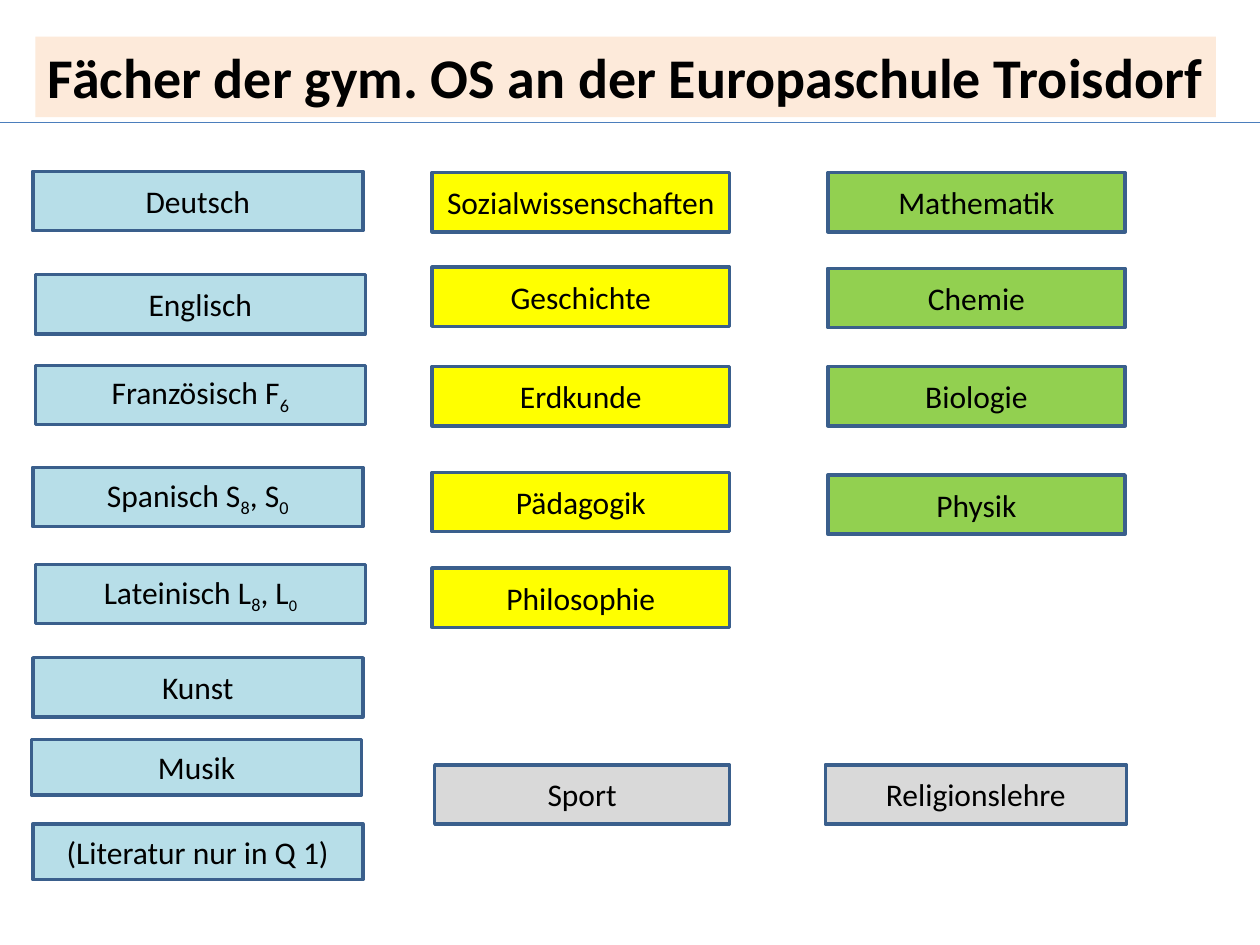
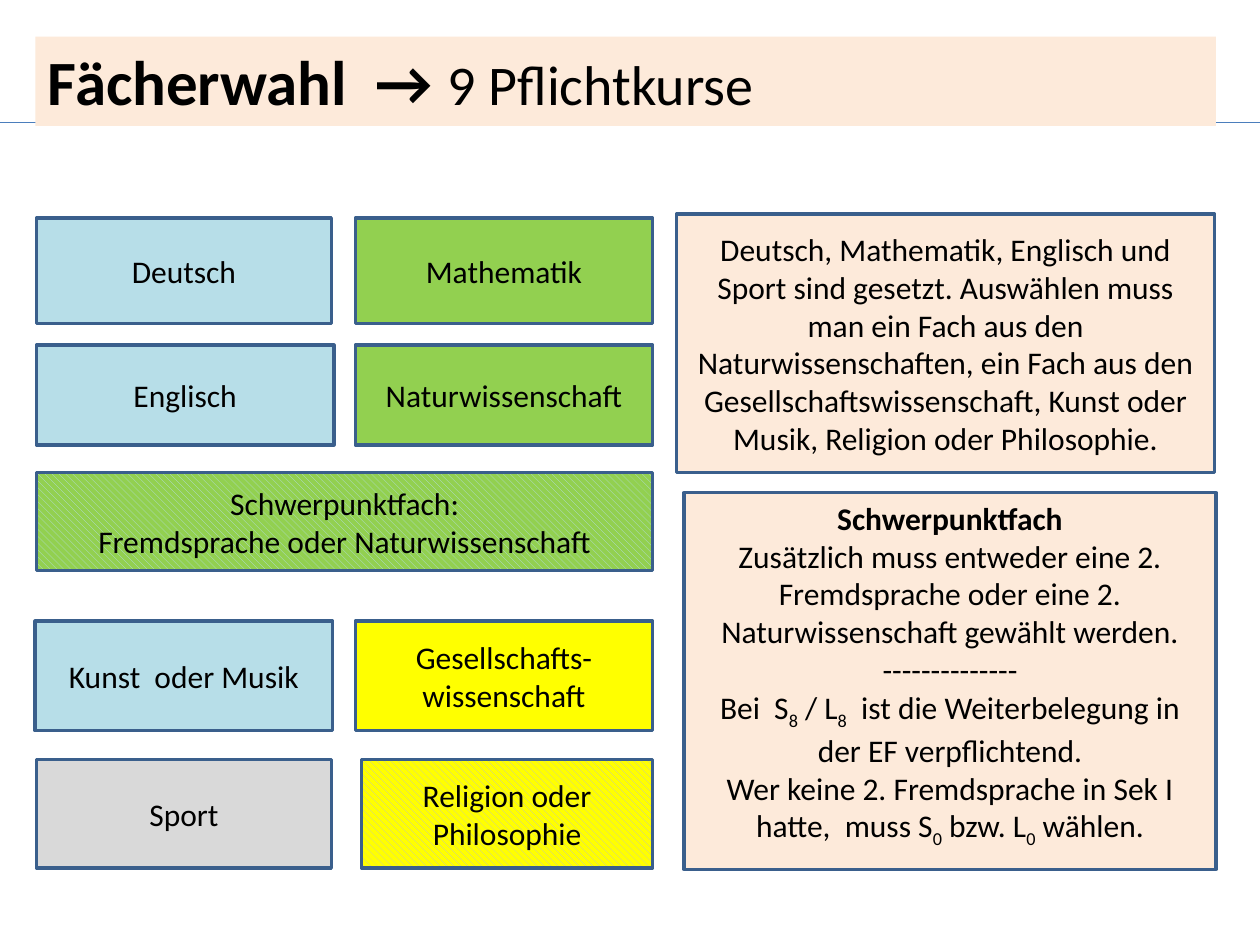
from dataclasses import dataclass

from lxml import etree
from pptx import Presentation
from pptx import util as u
from pptx.dml import color
from pptx.enum import dml, shapes, text
from pptx.oxml import ns

PX = 9144  # 100 px to the inch


@dataclass(frozen=True)
class Theme:
    font: str = "Calibri"
    ink: str = "000000"
    edge: str = "3A5F8C"
    rule: str = "4B7EBC"
    peach: str = "FDEADA"
    blue: str = "B7DEE8"
    green: str = "92D050"
    yellow: str = "FFFF00"
    gray: str = "D9D9D9"
    hatch: str = "BFBFBF"
    body: int = 18
    small: int = 16
    head: int = 32
    large: int = 36


T = Theme()


def px(*nums):
    return [u.Emu(n * PX) for n in nums]


def rgb(code):
    return color.RGBColor.from_string(code)


def style(font, size, bold=False):
    font.name, font.size, font.bold = T.font, u.Pt(size), bold
    font.color.rgb = rgb(T.ink)


def paint(fill, tone):
    """Fill with one colour, or hatch with a (front, back) pair."""
    if isinstance(tone, tuple):
        fill.patterned()
        fill.pattern = dml.MSO_PATTERN.WIDE_DOWNWARD_DIAGONAL
        fill.fore_color.rgb, fill.back_color.rgb = map(rgb, tone)
    else:
        fill.solid()
        fill.fore_color.rgb = rgb(tone)


def write(para, line):
    """Add runs to a paragraph; the sign after each underscore is lowered."""
    first, *rest = line.split("_")
    para.add_run().text = first
    for part in rest:
        low = para.add_run()
        low.text = part[0]
        low.font._element.set("baseline", "-25000")
        if part[1:]:
            para.add_run().text = part[1:]


def card(slide, box, tone, *lines):
    shape = slide.shapes.add_shape(shapes.MSO_SHAPE.RECTANGLE, *px(*box))
    shape.shadow.inherit = False
    paint(shape.fill, tone)
    shape.line.color.rgb = rgb(T.edge)
    shape.line.width = u.Pt(2)
    frame = shape.text_frame
    frame.word_wrap = True
    for i, line in enumerate(lines):
        para = frame.add_paragraph() if i else frame.paragraphs[0]
        para.alignment = text.PP_ALIGN.CENTER
        style(para.font, T.body)
        write(para, line)
    return frame


def stack(slide, box, tone, items):
    """Place cards at (shift, drop, label) from the corner of the box."""
    left, top, wide, high = box
    return [card(slide, (left + dx, top + dy, wide, high), tone, label)
            for dx, dy, label in items]


def header(slide, high, *parts):
    """Fill the title band with (words, size, bold) parts over the rule."""
    rule = slide.shapes.add_connector(
        shapes.MSO_CONNECTOR.STRAIGHT, *px(0, 97, 1000, 97))
    rule.line.color.rgb = rgb(T.rule)
    rule.line.width = u.Pt(0.75)
    etree.SubElement(rule.element.spPr, ns.qn("a:effectLst"))
    slide.shapes.element.insert(2, rule.element)

    title = slide.shapes.title
    title.left, title.top, title.width, title.height = px(28, 29, 937, high)
    paint(title.fill, T.peach)
    frame = title.text_frame
    frame.auto_size = text.MSO_AUTO_SIZE.NONE
    frame.vertical_anchor = text.MSO_ANCHOR.TOP
    frame.margin_right = 0  # the longest title needs the full band
    para = frame.paragraphs[0]
    para.alignment = text.PP_ALIGN.LEFT
    for words, size, bold in parts:
        run = para.add_run()
        run.text = words
        style(run.font, size, bold)


def subjects(slide):
    header(slide, 64,
           ("Fächer der gym. OS an der Europaschule Troisdorf", T.head, True))
    tongues = stack(slide, (26, 136, 262, 47), T.blue, [
        (0, 0, "Deutsch"), (2, 82, "Englisch"), (2, 154, "Französisch F_6"),
        (0, 235, "Spanisch S_8, S_0"), (2, 312, "Lateinisch L_8, L_0"),
        (0, 386, "Kunst")])
    tongues[4].paragraphs[0].runs[-1].font.size = u.Pt(T.small)
    stack(slide, (26, 587, 262, 44), T.blue, [
        (-1, 0, "Musik"), (0, 67, "(Literatur nur in Q 1)")])
    stack(slide, (343, 137, 236, 47), T.yellow, [
        (0, 0, "Sozialwissenschaften"), (0, 75, "Geschichte"),
        (0, 154, "Erdkunde"), (0, 238, "Pädagogik"), (0, 314, "Philosophie")])
    stack(slide, (657, 137, 236, 47), T.green, [
        (0, 0, "Mathematik"), (0, 76, "Chemie"), (0, 154, "Biologie"),
        (0, 240, "Physik")])
    card(slide, (345, 607, 234, 47), T.gray, "Sport")
    card(slide, (655, 607, 239, 47), T.gray, "Religionslehre")


def choices(slide, left, top):
    """Lay out the nine required courses from the given corner."""
    for dx, dy, wide, high, tone, *lines in [
            (1, 0, 234, 84, T.blue, "Deutsch"),
            (254, 0, 236, 84, T.green, "Mathematik"),
            (1, 101, 236, 79, T.blue, "Englisch"),
            (254, 101, 236, 79, T.green, "Naturwissenschaft"),
            (1, 202, 489, 78, (T.blue, T.green), "Schwerpunktfach:",
             "Fremdsprache oder Naturwissenschaft"),
            (0, 320, 236, 87, T.blue, "Kunst  oder Musik"),
            (254, 320, 236, 87, T.yellow, "Gesellschafts-wissenschaft"),
            (1, 430, 234, 86, T.gray, "Sport"),
            (259, 430, 231, 86, (T.hatch, T.yellow),
             "Religion oder Philosophie")]:
        card(slide, (left + dx, top + dy, wide, high), tone, *lines)


def notes(slide, left, top):
    """Lay out the two explanations from the given corner."""
    card(slide, (left, top, 427, 205), T.peach,
         "Deutsch, Mathematik, Englisch und Sport sind gesetzt. Auswählen "
         "muss man ein Fach aus den Naturwissenschaften, ein Fach aus den "
         "Gesellschaftswissenschaft, Kunst oder Musik, Religion oder "
         "Philosophie.")
    focus = card(
        slide, (left + 6, top + 221, 422, 299), T.peach,
        "Schwerpunktfach",
        "Zusätzlich muss entweder eine 2. Fremdsprache oder eine 2. "
        "Naturwissenschaft gewählt werden.",
        "--------------",
        "Bei  S_8 / L_8  ist die Weiterbelegung in der EF verpflichtend.",
        "Wer keine 2. Fremdsprache in Sek I hatte,  muss S_0 bzw. L_0 wählen.")
    focus.vertical_anchor = text.MSO_ANCHOR.TOP
    focus.paragraphs[0].font.bold = True


def courses(slide):
    header(slide, 71, ("Fächerwahl  → ", T.large, True),
           ("9 Pflichtkurse", T.head, False))
    choices(slide, 28, 173)
    notes(slide, 537, 170)


def main():
    deck = Presentation()
    deck.slide_width, deck.slide_height = px(1000, 750)
    for build in (subjects, courses):
        build(deck.slides.add_slide(deck.slide_layouts[5]))
    deck.save("out.pptx")


if __name__ == "__main__":
    main()
